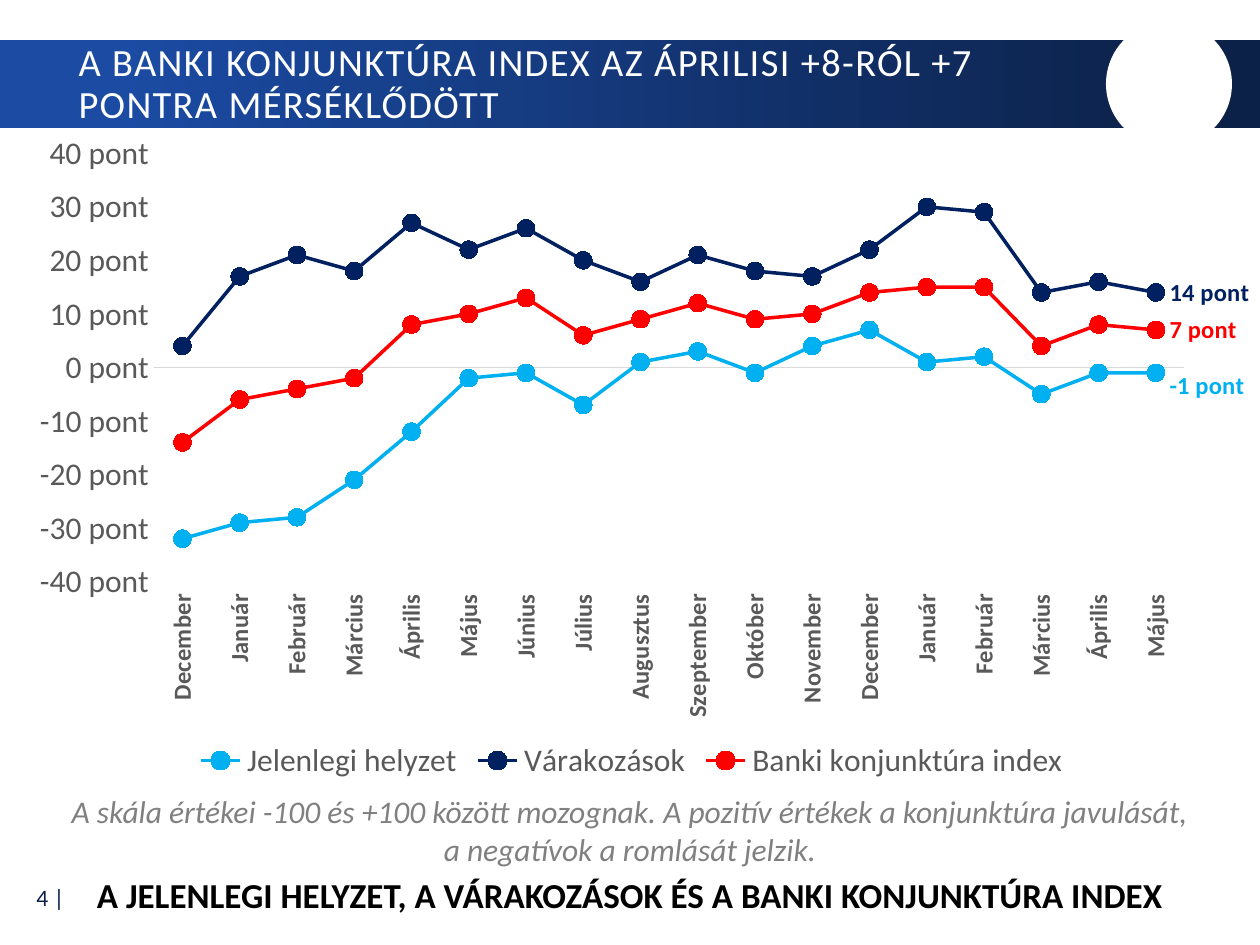
"""Build the slide with the monthly business climate index line chart."""
import pptx
import pptx.chart.data
import pptx.dml.color
import pptx.enum.chart
import pptx.enum.shapes
import pptx.enum.text
import pptx.oxml
import pptx.oxml.ns
import pptx.util

RGB = pptx.dml.color.RGBColor
WHITE = RGB(0xFF, 0xFF, 0xFF)
BLACK = RGB(0x00, 0x00, 0x00)
BLUE = RGB(0x1B, 0x4B, 0xA3)
NAVY = RGB(0x0C, 0x21, 0x48)
GREY = RGB(0x80, 0x80, 0x80)
DARK_GREY = RGB(0x59, 0x59, 0x59)
LIGHT_GREY = RGB(0xD9, 0xD9, 0xD9)
SKY = RGB(0x00, 0xB0, 0xF0)
DEEP_BLUE = RGB(0x00, 0x20, 0x60)
RED = RGB(0xFF, 0x00, 0x00)

FONT = "Calibri"
PX = 914400 / 126
PT = pptx.util.Pt
ALIGN = pptx.enum.text.PP_ALIGN
ANCHOR = pptx.enum.text.MSO_ANCHOR
SHAPE = pptx.enum.shapes.MSO_SHAPE
XL = pptx.enum.chart


def box(*lengths):
    return [round(n * PX) for n in lengths]


def write(sp, text, size, color, align, anchor, bold=False, italic=False):
    tf = sp.text_frame
    tf.word_wrap = True
    tf.auto_size = pptx.enum.text.MSO_AUTO_SIZE.NONE
    tf.vertical_anchor = anchor
    p = tf.paragraphs[0]
    p.alignment = align
    r = p.add_run()
    r.text = text
    r.font.name, r.font.size = FONT, PT(size)
    r.font.bold, r.font.italic = bold, italic
    r.font.color.rgb = color
    return p, r


prs = pptx.Presentation()
prs.slide_width, prs.slide_height = box(1260, 945)
s = prs.slides.add_slide(prs.slide_layouts[5])

bar = s.shapes.add_shape(SHAPE.RECTANGLE, *box(0, 40, 1260, 88))
bar.fill.gradient()
bar.fill.gradient_angle = 0
for stop, position, color in zip(bar.fill.gradient_stops, (0.09, 0.95), (BLUE, NAVY)):
    stop.position = position
    stop.color.rgb = color
circle = s.shapes.add_shape(SHAPE.OVAL, *box(1106, 21, 126, 126))
circle.fill.solid()
circle.fill.fore_color.rgb = WHITE
for sp in (bar, circle):
    sp.line.fill.background()
    sp.shadow.inherit = False

title = s.shapes.title
title.left, title.top, title.width, title.height = box(66, 43, 1048, 84)
p, r = write(title, "A BANKI KONJUNKTÚRA INDEX AZ ÁPRILISI +8-RÓL +7 PONTRA MÉRSÉKLŐDÖTT",
             22, WHITE, ALIGN.LEFT, ANCHOR.MIDDLE)
p.line_spacing = 0.9
r.font._element.set("spc", "80")
s.shapes._spTree.append(title._element)

texts = [
    ((1, 874, 76, 47), "4 |", 13.5, NAVY, ALIGN.RIGHT, ANCHOR.MIDDLE, False, False),
    ((2, 867, 1256, 55), "A JELENLEGI HELYZET, A VÁRAKOZÁSOK ÉS A BANKI KONJUNKTÚRA INDEX",
     20, BLACK, ALIGN.CENTER, ANCHOR.TOP, True, False),
    ((55, 786, 1150, 89),
     "A skála értékei -100 és +100 között mozognak. A pozitív értékek a konjunktúra javulását, "
     "a negatívok a romlását jelzik.", 18, GREY, ALIGN.CENTER, ANCHOR.TOP, False, True),
]
for place, *style in texts:
    write(s.shapes.add_textbox(*box(*place)), *style)

months = ["Január", "Február", "Március", "Április", "Május", "Június", "Július",
          "Augusztus", "Szeptember", "Október", "November", "December"]
series = [
    ("Jelenlegi helyzet", SKY,
     (-32, -29, -28, -21, -12, -2, -1, -7, 1, 3, -1, 4, 7, 1, 2, -5, -1, -1)),
    ("Várakozások", DEEP_BLUE,
     (4, 17, 21, 18, 27, 22, 26, 20, 16, 21, 18, 17, 22, 30, 29, 14, 16, 14)),
    ("Banki konjunktúra index", RED,
     (-14, -6, -4, -2, 8, 10, 13, 6, 9, 12, 9, 10, 14, 15, 15, 4, 8, 7)),
]
data = pptx.chart.data.CategoryChartData(number_format='General\\ "pont"')
data.categories = months[-1:] + months + months[:5]
for name, color, values in series:
    data.add_series(name, values)
chart = s.shapes.add_chart(XL.XL_CHART_TYPE.LINE_MARKERS, *box(3, 127, 1257, 659), data).chart
chart.has_title = False
chart.font.name, chart.font.size = FONT, PT(18)
chart.font.color.rgb = BLACK
chart.plots[0].vary_by_categories = False

chart.has_legend = True
chart.legend.position = XL.XL_LEGEND_POSITION.BOTTOM
chart.legend.include_in_layout = False

cat, val = chart.category_axis, chart.value_axis
for axis in (cat, val):
    axis.has_major_gridlines = False
    axis.major_tick_mark = axis.minor_tick_mark = XL.XL_TICK_MARK.NONE
for font, size in ((chart.legend.font, 18), (cat.tick_labels.font, 14), (val.tick_labels.font, 18)):
    font.name, font.size = FONT, PT(size)
    font.color.rgb = DARK_GREY
cat.tick_labels.font.bold = True
cat.tick_label_position = XL.XL_TICK_LABEL_POSITION.LOW
cat.format.line.color.rgb = LIGHT_GREY
cat.format.line.width = PT(0.75)
body = cat._element.find(".//" + pptx.oxml.ns.qn("a:bodyPr"))
body.set("rot", "-5400000")
body.set("vert", "horz")
val.format.line.fill.background()
val.minimum_scale, val.maximum_scale, val.major_unit = -40, 40, 10
val.tick_labels.number_format = 'General\\ "pont"'
val.tick_labels.number_format_is_linked = False

for ser, (name, color, values) in zip(chart.plots[0].series, series):
    ser.smooth = False
    ser.format.line.color.rgb = color
    ser.format.line.width = PT(2)
    ser.marker.style = XL.XL_MARKER_STYLE.CIRCLE
    ser.marker.size = 10
    ser.marker.format.fill.solid()
    ser.marker.format.fill.fore_color.rgb = color
    ser.marker.format.line.color.rgb = color
    label = ser.points[len(values) - 1].data_label
    label.font.name, label.font.size, label.font.bold = FONT, PT(14), True
    label.font.color.rgb = color
    label.position = XL.XL_LABEL_POSITION.RIGHT

LAYOUT = "<c:layout %s><c:manualLayout>%%s</c:manualLayout></c:layout>" % pptx.oxml.ns.nsdecls("c")
plot_layout = LAYOUT % (
    '<c:layoutTarget val="inner"/><c:xMode val="edge"/><c:yMode val="edge"/>'
    '<c:x val="0.12"/><c:y val="0.04"/><c:w val="0.82"/><c:h val="0.65"/>')
area = chart._chartSpace.chart.plotArea
for old in area.findall(pptx.oxml.ns.qn("c:layout")):
    area.remove(old)
area.insert(0, pptx.oxml.parse_xml(plot_layout))
first_label = area.find(".//" + pptx.oxml.ns.qn("c:dLbl"))
first_label.insert(1, pptx.oxml.parse_xml(LAYOUT % '<c:x val="0"/><c:y val="0.02"/>'))

prs.save("out.pptx")
